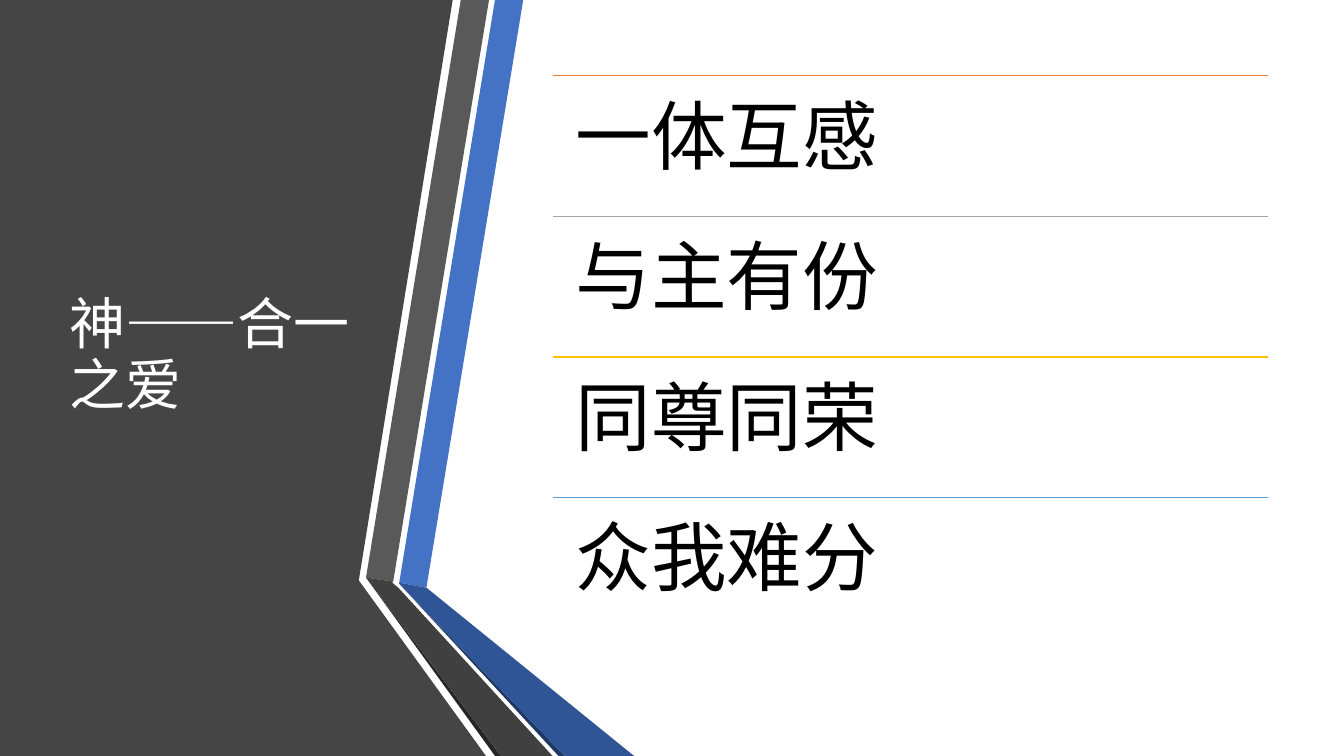
from pptx import Presentation
from pptx.dml.color import RGBColor
from pptx.enum.text import MSO_ANCHOR, MSO_AUTO_SIZE, PP_ALIGN
from pptx.enum.shapes import MSO_CONNECTOR
from pptx.oxml.ns import qn
from pptx.util import Inches, Pt
from lxml import etree

MIDDLE, TOP = MSO_ANCHOR.MIDDLE, MSO_ANCHOR.TOP
LEFT = PP_ALIGN.LEFT
NO_AUTOFIT = MSO_AUTO_SIZE.NONE
STRAIGHT = MSO_CONNECTOR.STRAIGHT

WHITE = RGBColor(0xFF, 0xFF, 0xFF)
BLACK = RGBColor(0x00, 0x00, 0x00)
PANEL = RGBColor(0x45, 0x45, 0x45)
BLUE = RGBColor(0x44, 0x72, 0xC4)
GRAY = RGBColor(0x59, 0x59, 0x59)
GRAY_EDGE = RGBColor(0x26, 0x26, 0x26)
BLUE_EDGE = RGBColor(0x20, 0x38, 0x64)
BLUE_FOLD = RGBColor(0x2F, 0x55, 0x97)
GRAY_FOLD = RGBColor(0x40, 0x40, 0x40)
ORANGE = RGBColor(0xED, 0x7D, 0x31)
SILVER = RGBColor(0xA5, 0xA5, 0xA5)
GOLD = RGBColor(0xFF, 0xC0, 0x00)
SKY = RGBColor(0x5B, 0x9B, 0xD5)

FONT = "Noto Sans CJK SC"
TITLE = "神——合一之爱"
ROWS = [
    ("一体互感", ORANGE),
    ("与主有份", SILVER),
    ("同尊同荣", GOLD),
    ("众我难分", SKY),
]
RIBBONS = [
    (PANEL, [(0, 0), (4.49, 0), (3.56, 5.75), (3.56, 5.76), (4.82, 7.5), (0, 7.5)]),
    (BLUE, [(3.96, 5.78), (4.23, 5.83), (5.19, 0), (4.91, 0)]),
    (GRAY, [(4.85, 0), (4.57, 0), (3.63, 5.73), (3.9, 5.77)]),
    (GRAY_EDGE, [(3.63, 5.73), (4.91, 7.5), (4.97, 7.5)]),
    (BLUE_EDGE, [(3.96, 5.79), (5.54, 7.5), (5.6, 7.5)]),
    (BLUE_FOLD, [(3.96, 5.79), (5.6, 7.5), (6.29, 7.5), (4.23, 5.83), (3.96, 5.78)]),
    (GRAY_FOLD, [(5.48, 7.5), (3.95, 5.83), (3.89, 5.78), (3.9, 5.77), (3.63, 5.73), (4.97, 7.5)]),
]
LIST_LEFT, LIST_TOP, LIST_WIDTH, LIST_HEIGHT = 5.48, 0.75, 7.1, 5.58
ROW_HEIGHT = LIST_HEIGHT / len(ROWS)
ROW_INSET = Inches(0.23)


def write_text(sp, text, size, color, anchor):
    tf = sp.text_frame
    tf.text = text
    tf.word_wrap = True
    tf.auto_size = NO_AUTOFIT
    tf.vertical_anchor = anchor
    p = tf.paragraphs[0]
    p.alignment = LEFT
    p.line_spacing = 0.9
    font = p.runs[0].font
    font.size = Pt(size)
    font.name = FONT
    font.color.rgb = color
    etree.SubElement(p.runs[0]._r.get_or_add_rPr(), qn("a:ea")).set("typeface", FONT)
    return tf


def add_ribbon(shapes, color, points):
    corners = [(Inches(x), Inches(y)) for x, y in points]
    builder = shapes.build_freeform(*corners[0])
    builder.add_line_segments(corners[1:], close=True)
    sp = builder.convert_to_shape()
    sp.shadow.inherit = False
    sp.fill.solid()
    sp.fill.fore_color.rgb = color
    sp.line.fill.background()


def add_row(shapes, index, text, color):
    left, width = Inches(LIST_LEFT), Inches(LIST_WIDTH)
    top = Inches(LIST_TOP + index * ROW_HEIGHT)
    rule = shapes.add_connector(STRAIGHT, left, top, left + width, top)
    rule.line.color.rgb = color
    rule.line.width = Pt(1)
    etree.SubElement(rule._element.spPr, qn("a:effectLst"))
    box = shapes.add_textbox(left, top, width, Inches(ROW_HEIGHT))
    tf = write_text(box, text, 54, BLACK, TOP)
    tf.margin_left = tf.margin_right = tf.margin_top = tf.margin_bottom = ROW_INSET


def main():
    prs = Presentation()
    prs.slide_width, prs.slide_height = Inches(13.33), Inches(7.5)
    slide = prs.slides.add_slide(prs.slide_layouts[5])
    shapes = slide.shapes
    for color, points in RIBBONS:
        add_ribbon(shapes, color, points)

    title = shapes.title
    title.left, title.top = Inches(0.59), Inches(0.75)
    title.width, title.height = Inches(3.04), Inches(5.58)
    write_text(title, TITLE, 40, WHITE, MIDDLE)
    shapes._spTree.append(title._element)

    for index, (text, color) in enumerate(ROWS):
        add_row(shapes, index, text, color)
    prs.save("out.pptx")


if __name__ == "__main__":
    main()
